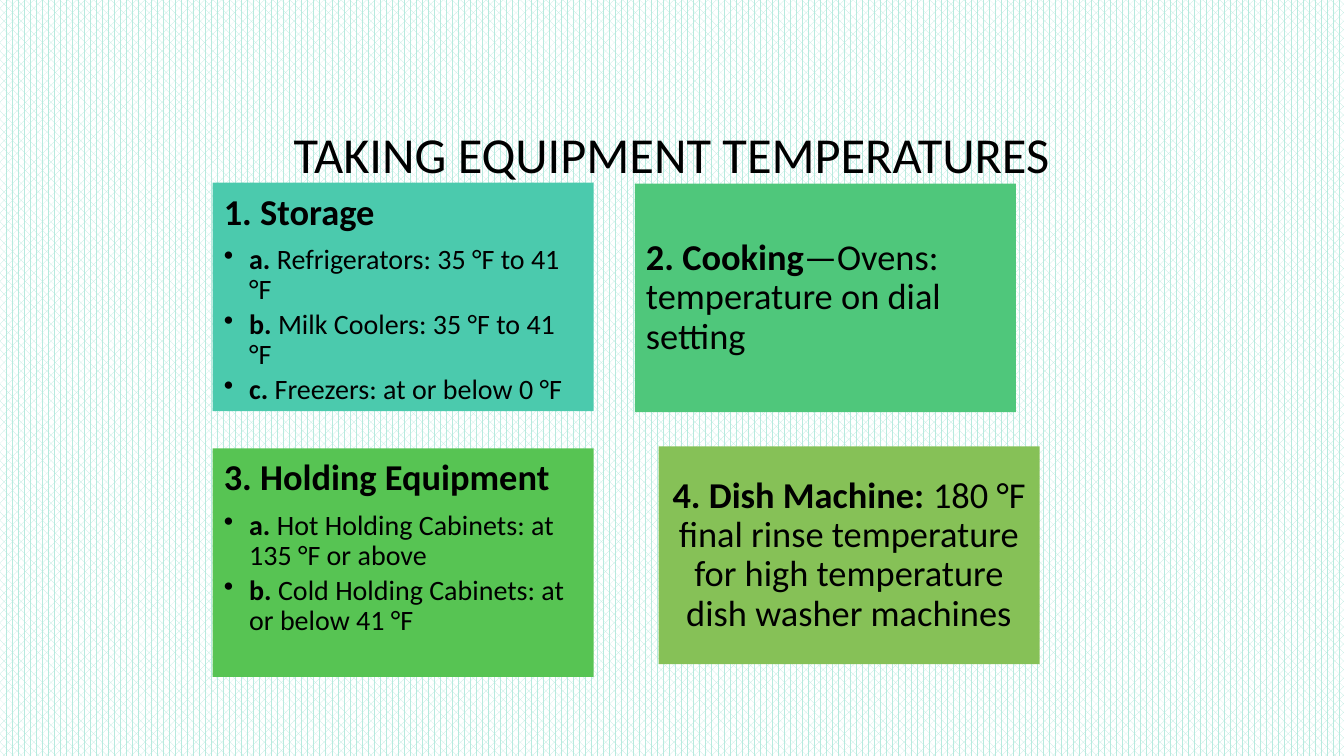
from dataclasses import dataclass

from pptx import Presentation
from pptx.dml.color import RGBColor as Rgb
from pptx.enum.dml import MSO_PATTERN as Pattern
from pptx.enum.shapes import MSO_SHAPE as Shape
from pptx.enum.text import MSO_ANCHOR as Anchor, PP_ALIGN as Align
from pptx.oxml.xmlchemy import OxmlElement as Element
from pptx.slide import Slide
from pptx.text.text import TextFrame, _Paragraph as Para
from pptx.util import Cm, Pt


@dataclass(frozen=True)
class Theme:
    font: str = "Calibri"
    ink: str = "000000"
    dots: str = "B7EADE"
    paper: str = "FFFFFF"
    teal: str = "4BCAAD"
    mint: str = "4FC77B"
    green: str = "57C453"
    olive: str = "86C157"
    title: int = 36
    head: int = 26
    item: int = 20


@dataclass(frozen=True)
class Line:
    bold: str
    plain: str = ""


@dataclass(frozen=True)
class Card:
    left: float
    top: float
    height: float
    fill: str
    head: Line
    items: tuple[Line, ...] = ()
    align: Align = Align.LEFT


THEME = Theme()
WIDTH, TALL = 9.6, 5.76
INSET = 0.28
INDENT = 0.64
COL = 5.36

CARDS = (
    Card(COL, 4.6, TALL, THEME.teal, Line("1. Storage"), (
        Line("a. ", "Refrigerators: 35 °F to 41 °F"),
        Line("b. ", "Milk Coolers: 35 °F to 41 °F"),
        Line("c. ", "Freezers: at or below 0 °F"))),
    Card(16, 4.63, TALL, THEME.mint,
         Line("2. Cooking", "—Ovens: temperature on dial setting")),
    Card(COL, 11.3, TALL, THEME.green, Line("3. Holding Equipment"), (
        Line("a. ", "Hot Holding Cabinets: at 135 °F or above"),
        Line("b. ", "Cold Holding Cabinets: at or below 41 °F"))),
    Card(16.6, 11.25, 5.49, THEME.olive,
         Line("4. Dish Machine: ",
              "180 °F final rinse temperature for high temperature dish washer machines"),
         align=Align.CENTER),
)


def apply(target: object, values: dict) -> None:
    for name, value in values.items():
        setattr(target, name, value)


def set_frame(frame: TextFrame, anchor: Anchor, inset: float) -> None:
    sides = ("left", "top", "right", "bottom")
    apply(frame, {"word_wrap": True, "vertical_anchor": anchor}
          | {f"margin_{side}": Cm(inset) for side in sides})


def write(para: Para, line: Line, size: int, after: int, align: Align) -> None:
    apply(para, {"alignment": align, "line_spacing": 0.9,
                 "space_before": Pt(0), "space_after": Pt(after)})
    for text, bold in ((line.bold, True), (line.plain, False)):
        if text:
            run = para.add_run()
            run.text = text
            apply(run.font, {"name": THEME.font, "size": Pt(size), "bold": bold})
            run.font.color.rgb = Rgb.from_string(THEME.ink)


def add_dot(para: Para) -> None:
    """Give the paragraph a bullet with a hanging indent."""
    props = para._p.get_or_add_pPr()
    props.set("marL", str(Cm(INDENT)))
    props.set("indent", str(-Cm(INDENT)))
    dot = Element("a:buChar")
    dot.set("char", "•")
    props.append(dot)


def draw_card(slide: Slide, card: Card) -> None:
    box = slide.shapes.add_shape(Shape.RECTANGLE, Cm(card.left), Cm(card.top),
                                 Cm(WIDTH), Cm(card.height))
    box.shadow.inherit = False
    box.fill.solid()
    box.fill.fore_color.rgb = Rgb.from_string(card.fill)
    box.line.fill.background()
    frame = box.text_frame
    set_frame(frame, Anchor.TOP if card.items else Anchor.MIDDLE, INSET)
    write(frame.paragraphs[0], card.head, THEME.head, 9, card.align)
    for item in card.items:
        para = frame.add_paragraph()
        para.level = 1
        add_dot(para)
        write(para, item, THEME.item, 3, card.align)


def draw_title(slide: Slide, text: str) -> None:
    box = slide.shapes.add_textbox(Cm(2.54), Cm(1.73), Cm(28.78), Cm(4.45))
    set_frame(box.text_frame, Anchor.MIDDLE, INSET)
    write(box.text_frame.paragraphs[0], Line("", text), THEME.title, 0, Align.CENTER)


def paint_back(slide: Slide) -> None:
    fill = slide.background.fill
    fill.patterned()
    fill.pattern = Pattern.PERCENT_60
    fill.fore_color.rgb = Rgb.from_string(THEME.dots)
    fill.back_color.rgb = Rgb.from_string(THEME.paper)


def main() -> None:
    deck = Presentation()
    apply(deck, {"slide_width": Cm(33.87), "slide_height": Cm(19.05)})
    slide = deck.slides.add_slide(deck.slide_layouts[6])
    paint_back(slide)
    draw_title(slide, "TAKING EQUIPMENT TEMPERATURES")
    for card in CARDS:
        draw_card(slide, card)
    deck.save("out.pptx")


if __name__ == "__main__":
    main()
